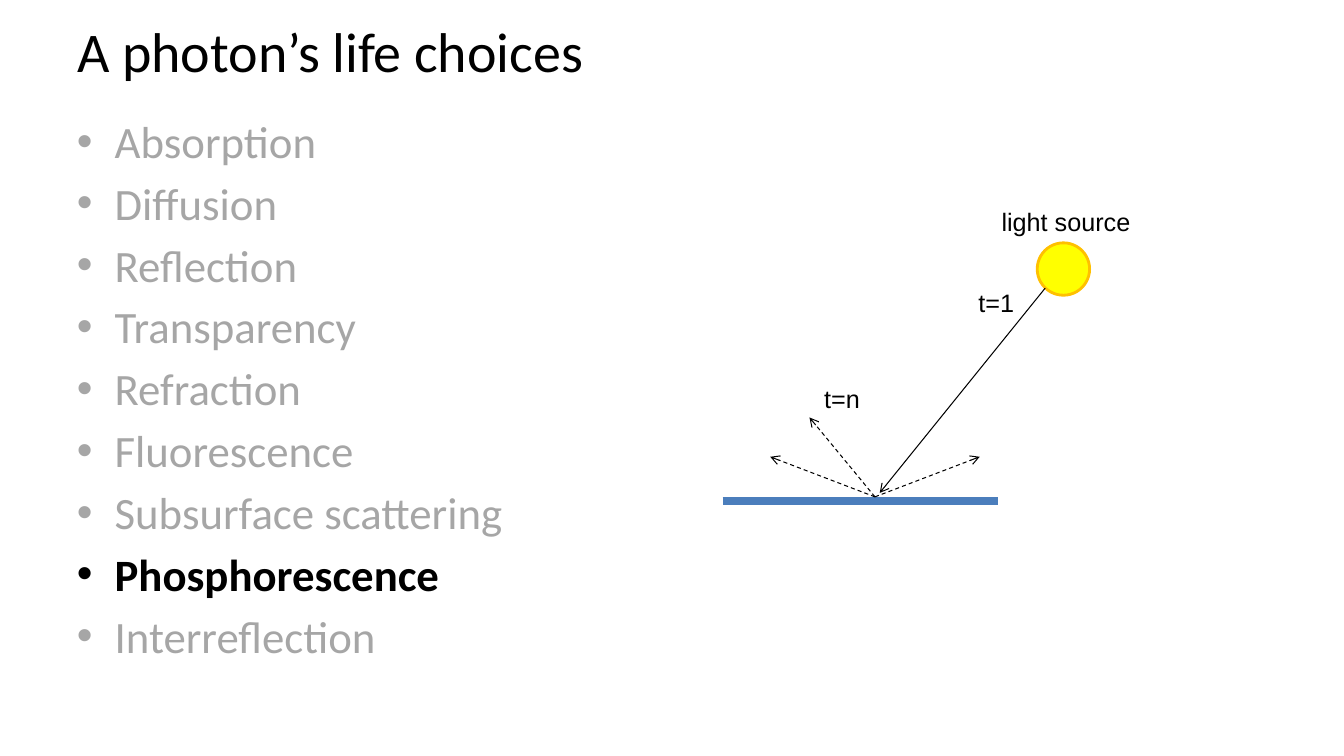
from dataclasses import dataclass
from typing import Optional

from lxml.etree import SubElement as Sub
from pptx import Presentation
from pptx.dml.color import RGBColor as Rgb
from pptx.enum.dml import MSO_LINE as Dash
from pptx.enum.shapes import MSO_CONNECTOR as Link, MSO_SHAPE as Kind
from pptx.enum.text import MSO_ANCHOR as Anchor, MSO_AUTO_SIZE as Fit, PP_ALIGN as Align
from pptx.oxml.ns import qn
from pptx.util import Cm, Pt


@dataclass(frozen=True)
class Theme:
    black: str = "000000"
    grey: str = "A6A6A6"
    blue: str = "4B7EBC"
    yellow: str = "FFFF00"
    amber: str = "FFC000"
    head: str = "Calibri"
    plain: str = "Arial"
    title: float = 40
    list: float = 32
    label: float = 18
    gap: float = 5.75


@dataclass(frozen=True)
class Line:
    start: tuple[float, float]
    end: tuple[float, float]
    color: str
    width: float = 0.75
    dash: Optional[Dash] = None
    arrow: bool = True


@dataclass(frozen=True)
class Label:
    text: str
    box: tuple[float, float, float, float]
    wrap: bool = False


THEME = Theme()

CHOICES = ["Absorption", "Diffusion", "Reflection", "Transparency", "Refraction",
           "Fluorescence", "Subsurface scattering", "Phosphorescence", "Interreflection"]
ACTIVE = "Phosphorescence"

# Positions are in centimetres; emitted rays are offsets from the hit point
HIT = (22.05, 12.52)
RAYS = [(-1.65, -2.0), (-2.64, -1.01), (2.64, -1.01)]
SURFACE = Line((18.21, 12.62), (25.15, 12.62), THEME.blue, 6, arrow=False)
BEAM = Line((26.34, 7.26), (22.17, 12.42), THEME.black)
SUN = (26.14, 6.12, 1.32, 1.32)
LABELS = [
    Label("t=1", (24.41, 7.11, 1.42, 1.02)),
    Label("light source", (24.99, 5.08, 3.81, 1.07), True),
    Label("t=n", (20.52, 9.53, 1.42, 1.02)),
]


def put(item, values: dict) -> None:
    for name, value in values.items():
        setattr(item, name, value)


def write(para, text: str, face: str, size: float, color: str, bold: bool = False) -> None:
    run = para.add_run()
    run.text = text
    put(run.font, {"name": face, "size": Pt(size), "bold": bold})
    run.font.color.rgb = Rgb.from_string(color)


def add_title(slide, text: str) -> None:
    title = slide.shapes.title
    put(title, {"left": Cm(1.69), "top": Cm(0), "width": Cm(30.48), "height": Cm(2.54)})
    put(title.text_frame, {"vertical_anchor": Anchor.MIDDLE, "auto_size": Fit.NONE})
    para = title.text_frame.paragraphs[0]
    para.alignment = Align.LEFT
    write(para, text, THEME.head, THEME.title, THEME.black)


def add_bullet(para) -> None:
    props = para._p.get_or_add_pPr()
    props.set("marL", str(Cm(0.95)))
    props.set("indent", str(-Cm(0.95)))
    Sub(props, qn("a:buFont"), typeface=THEME.plain)
    Sub(props, qn("a:buChar"), char="•")


def add_list(slide, items: list[str], active: str) -> None:
    frame = slide.shapes.add_textbox(Cm(1.69), Cm(2.74), Cm(30.48), Cm(14.27)).text_frame
    frame.word_wrap = True
    for i, item in enumerate(items):
        para = frame.add_paragraph() if i else frame.paragraphs[0]
        para.space_before = Pt(THEME.gap)
        add_bullet(para)
        on = item == active
        write(para, item, THEME.head, THEME.list, THEME.black if on else THEME.grey, on)


def add_line(slide, line: Line) -> None:
    link = slide.shapes.add_connector(
        Link.STRAIGHT, *(Cm(v) for v in line.start + line.end))
    link.line.color.rgb = Rgb.from_string(line.color)
    put(link.line, {"width": Pt(line.width), "dash_style": line.dash})
    if line.arrow:
        Sub(link.line._get_or_add_ln(), qn("a:tailEnd"), type="arrow")
    Sub(link._element.spPr, qn("a:effectLst"))


def add_sun(slide) -> None:
    sun = slide.shapes.add_shape(Kind.OVAL, *(Cm(v) for v in SUN))
    sun.shadow.inherit = False
    sun.fill.solid()
    sun.fill.fore_color.rgb = Rgb.from_string(THEME.yellow)
    sun.line.color.rgb = Rgb.from_string(THEME.amber)
    sun.line.width = Pt(2)


def add_label(slide, label: Label) -> None:
    frame = slide.shapes.add_textbox(*(Cm(v) for v in label.box)).text_frame
    put(frame, {"word_wrap": label.wrap, "auto_size": Fit.SHAPE_TO_FIT_TEXT})
    write(frame.paragraphs[0], label.text, THEME.plain, THEME.label, THEME.black)


def main() -> None:
    deck = Presentation()
    put(deck, {"slide_width": Cm(33.87), "slide_height": Cm(19.05)})
    slide = deck.slides.add_slide(deck.slide_layouts[5])

    # Title and list
    add_title(slide, "A photon’s life choices")
    add_list(slide, CHOICES, ACTIVE)

    # Surface, light source and incoming beam
    add_line(slide, SURFACE)
    add_sun(slide)
    add_line(slide, BEAM)

    # Emitted rays
    for dx, dy in RAYS:
        add_line(slide, Line(HIT, (HIT[0] + dx, HIT[1] + dy), THEME.black, dash=Dash.DASH))

    # Labels
    for label in LABELS:
        add_label(slide, label)

    deck.save("out.pptx")


if __name__ == "__main__":
    main()
